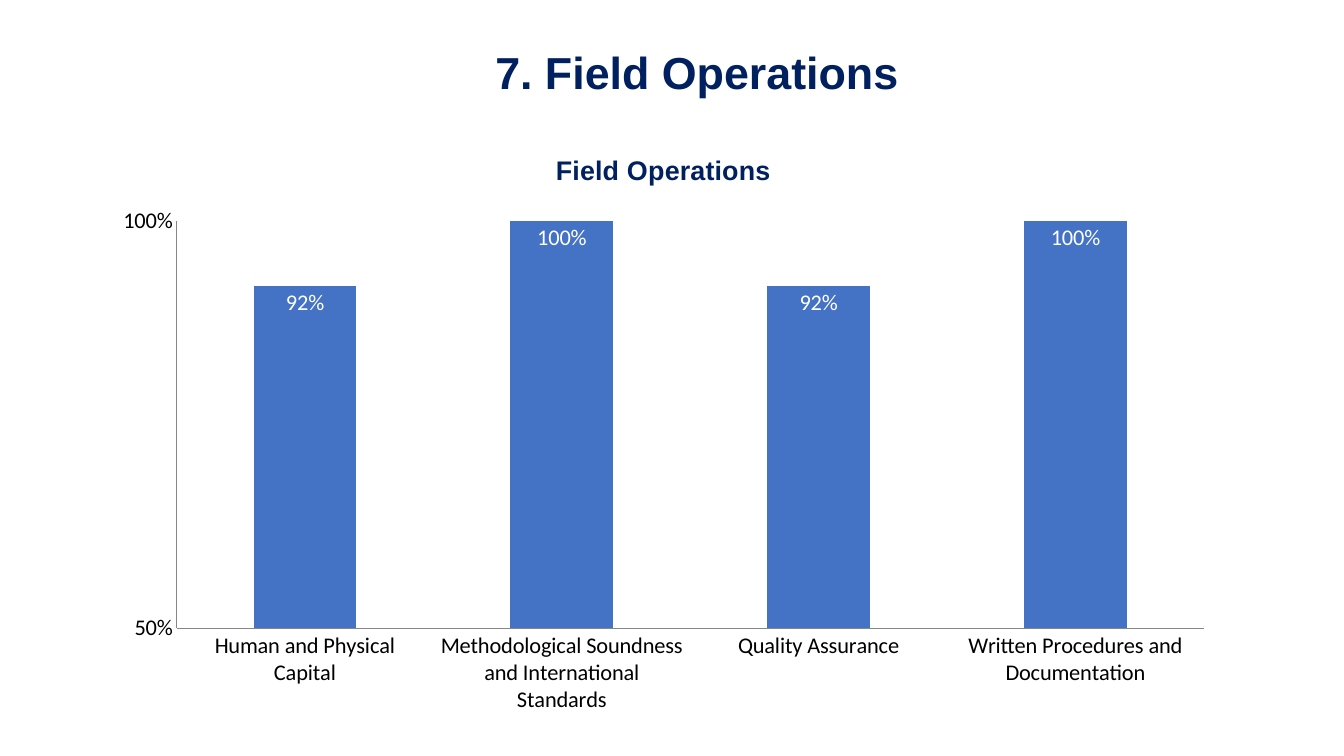
"""Build the Field Operations slide with its column chart."""
from typing import NamedTuple

from pptx import Presentation
from pptx.chart.data import CategoryChartData
from pptx.dml.color import RGBColor
from pptx.enum.chart import XL_CHART_TYPE, XL_LABEL_POSITION, XL_TICK_MARK
from pptx.enum.text import MSO_ANCHOR, PP_ALIGN
from pptx.util import Pt

COLUMN = XL_CHART_TYPE.COLUMN_CLUSTERED
INSIDE_END = XL_LABEL_POSITION.INSIDE_END
NO_TICK = XL_TICK_MARK.NONE
MIDDLE = MSO_ANCHOR.MIDDLE
CENTER = PP_ALIGN.CENTER

NAVY = RGBColor(0x00, 0x20, 0x60)
BLUE = RGBColor(0x44, 0x72, 0xC4)
GRAY = RGBColor(0x86, 0x86, 0x86)
BLACK = RGBColor(0x00, 0x00, 0x00)
WHITE = RGBColor(0xFF, 0xFF, 0xFF)


class Score(NamedTuple):
    area: str
    share: float


SCORES = [
    Score("Human and Physical Capital", 0.92),
    Score("Methodological Soundness and International Standards", 1),
    Score("Quality Assurance", 0.92),
    Score("Written Procedures and Documentation", 1),
]


def style_font(font, name: str, size: float, color: RGBColor, bold: bool = False) -> None:
    font.name, font.size, font.bold = name, Pt(size), bold
    font.color.rgb = color


def add_heading(tf, text: str, size: float):
    p = tf.paragraphs[0]
    p.alignment = CENTER
    r = p.add_run()
    r.text = text
    style_font(r.font, "Arial", size, NAVY, True)
    return p


def style_axis(axis) -> None:
    axis.has_major_gridlines = False
    axis.major_tick_mark = axis.minor_tick_mark = NO_TICK
    axis.format.line.color.rgb = GRAY
    axis.format.line.width = Pt(0.75)
    style_font(axis.tick_labels.font, "Calibri", 16, BLACK)


def add_title(s) -> None:
    sp = s.shapes.add_textbox(Pt(120), Pt(22.3), Pt(756), Pt(62))
    tf = sp.text_frame
    tf.word_wrap = True
    tf.vertical_anchor = MIDDLE
    add_heading(tf, "7. Field Operations", 32).line_spacing = 0.9


def add_score_chart(s) -> None:
    data = CategoryChartData(number_format="0%")
    data.categories = [score.area for score in SCORES]
    data.add_series("Series 1", [score.share for score in SCORES])
    frame = s.shapes.add_chart(COLUMN, Pt(72), Pt(93), Pt(804), Pt(425.5), data)
    chart = frame.chart
    style_font(chart.font, "Calibri", 16, BLACK)
    chart.has_legend = False
    chart.has_title = True
    chart.chart_title.include_in_layout = False
    add_heading(chart.chart_title.text_frame, "Field Operations", 19.2)

    style_axis(chart.category_axis)
    axis = chart.value_axis
    style_axis(axis)
    axis.minimum_scale, axis.maximum_scale, axis.major_unit = 0.5, 1, 0.5
    axis.tick_labels.number_format = "0%"
    axis.tick_labels.number_format_is_linked = False

    plot = chart.plots[0]
    plot.gap_width = 150
    plot.vary_by_categories = False
    series = plot.series[0]
    series.format.fill.solid()
    series.format.fill.fore_color.rgb = BLUE
    labels = series.data_labels
    labels.show_value = True
    labels.position = INSIDE_END
    labels.number_format = "0%"
    labels.number_format_is_linked = False
    style_font(labels.font, "Calibri", 16, WHITE)


def main() -> None:
    prs = Presentation()
    prs.slide_width, prs.slide_height = Pt(960), Pt(540)
    s = prs.slides.add_slide(prs.slide_layouts[6])
    add_title(s)
    add_score_chart(s)
    prs.save("out.pptx")


if __name__ == "__main__":
    main()
